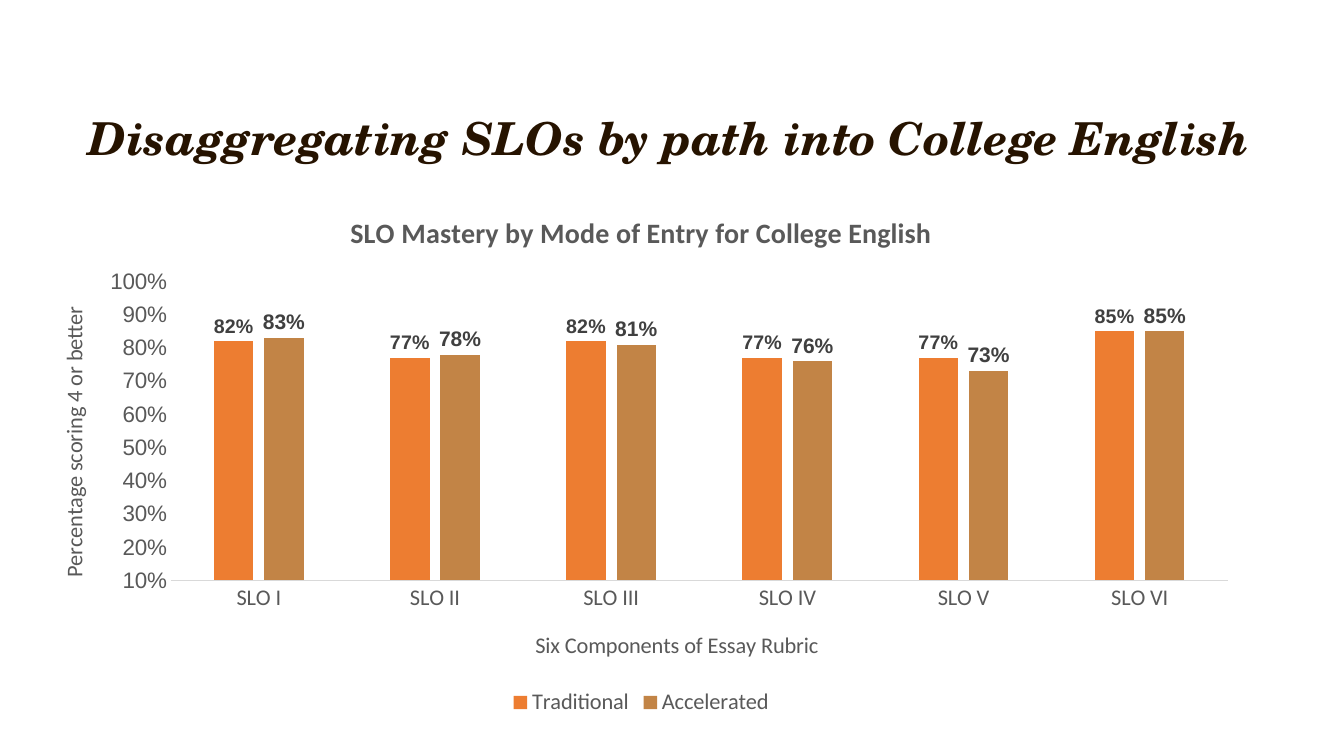
from lxml import etree
from pptx import Presentation
from pptx.chart.data import CategoryChartData
from pptx.dml.color import RGBColor
from pptx.enum.chart import (XL_CHART_TYPE, XL_LABEL_POSITION,
                             XL_LEGEND_POSITION, XL_TICK_MARK)
from pptx.enum.text import MSO_ANCHOR, PP_ALIGN
from pptx.oxml.ns import qn
from pptx.util import Inches, Pt

COLUMNS = XL_CHART_TYPE.COLUMN_CLUSTERED
OUTSIDE = XL_LABEL_POSITION.OUTSIDE_END
BOTTOM = XL_LEGEND_POSITION.BOTTOM
NO_TICK = XL_TICK_MARK.NONE

HEADING = "Disaggregating SLOs by path into College English"
TITLE = "SLO Mastery by Mode of Entry for College English"
CAT_TITLE = "Six Components of Essay Rubric"
VAL_TITLE = "Percentage scoring 4 or better"
CATS = ["SLO I", "SLO II", "SLO III", "SLO IV", "SLO V", "SLO VI"]
# name, values, fill, label size
SERIES = [
    ("Traditional", (0.82, 0.77, 0.82, 0.77, 0.77, 0.85), "ED7D31", 14),
    ("Accelerated", (0.83, 0.78, 0.81, 0.76, 0.73, 0.85), "C28446", 15),
]
GRAY = "595959"


def style(font, size, color, face="Calibri", bold=False):
    font.size, font.name, font.bold = Pt(size), face, bold
    font.color.rgb = RGBColor.from_string(color)


def place(layout, **parts):
    """Fix a chart part at fractions of the chart's size."""
    manual = etree.SubElement(layout, qn("c:manualLayout"))
    if "w" in parts:
        etree.SubElement(manual, qn("c:layoutTarget")).set("val", "inner")
    for key in ("x", "y"):
        etree.SubElement(manual, qn(f"c:{key}Mode")).set("val", "edge")
    for key, part in parts.items():
        etree.SubElement(manual, qn(f"c:{key}")).set("val", str(part))


def write(frame, text, size):
    """Fill a chart or axis title with one run."""
    run = frame.paragraphs[0].add_run()
    run.text = text
    style(run.font, size, GRAY, bold=size == 20)


def set_axis(axis, text, face, x, y):
    axis.has_major_gridlines = False
    axis.major_tick_mark = axis.minor_tick_mark = NO_TICK
    style(axis.tick_labels.font, 16, GRAY, face)
    title = axis.axis_title
    write(title.text_frame, text, 16)
    place(title._element.find(qn("c:layout")), x=x, y=y)


prs = Presentation()
prs.slide_width, prs.slide_height = Inches(13.33), Inches(7.5)
slide = prs.slides.add_slide(prs.slide_layouts[6])

box = slide.shapes.add_textbox(Inches(0.78), Inches(0.9), Inches(11.85), Inches(1))
frame = box.text_frame
frame.word_wrap = True
frame.vertical_anchor = MSO_ANCHOR.MIDDLE
para = frame.paragraphs[0]
para.alignment = PP_ALIGN.LEFT
para.line_spacing = 0.9
run = para.add_run()
run.text = HEADING
style(run.font, 32.4, "261300", "TeX Gyre Schola", True)
run.font.italic = True

data = CategoryChartData(number_format="0%")
data.categories = CATS
for name, vals, _, _ in SERIES:
    data.add_series(name, vals)
chart = slide.shapes.add_chart(COLUMNS, Inches(0.3), Inches(1.9), Inches(12.12),
                               Inches(5.25), data).chart
style(chart.font, 16, GRAY)
chart.has_title = True
write(chart.chart_title.text_frame, TITLE, 20)
chart.has_legend = True
chart.legend.position = BOTTOM
chart.legend.include_in_layout = False
style(chart.legend.font, 16, GRAY)

cat, val = chart.category_axis, chart.value_axis
set_axis(cat, CAT_TITLE, "Calibri", 0.41, 0.82)
set_axis(val, VAL_TITLE, "Arial", 0.02, 0.21)
cat.format.line.color.rgb = RGBColor.from_string("D9D9D9")
cat.format.line.width = Pt(0.75)
val.format.line.fill.background()
val.minimum_scale, val.maximum_scale, val.major_unit = 0.1, 1, 0.1
val.tick_labels.number_format = "0%"
val.tick_labels.number_format_is_linked = False

area = chart._chartSpace.chart.plotArea
layout = area.find(qn("c:layout"))
if layout is None:
    layout = etree.Element(qn("c:layout"))
    area.insert(0, layout)
place(layout, x=0.115, y=0.17, w=0.865, h=0.565)

plot = chart.plots[0]
plot.gap_width, plot.overlap, plot.vary_by_categories = 219, -27, False
for series, (_, _, color, size) in zip(plot.series, SERIES):
    series.format.fill.solid()
    series.format.fill.fore_color.rgb = RGBColor.from_string(color)
    labels = series.data_labels
    labels.show_value = True
    labels.position = OUTSIDE
    labels.number_format = "0%"
    labels.number_format_is_linked = False
    style(labels.font, size, "404040", "Arial", True)

prs.save("out.pptx")
